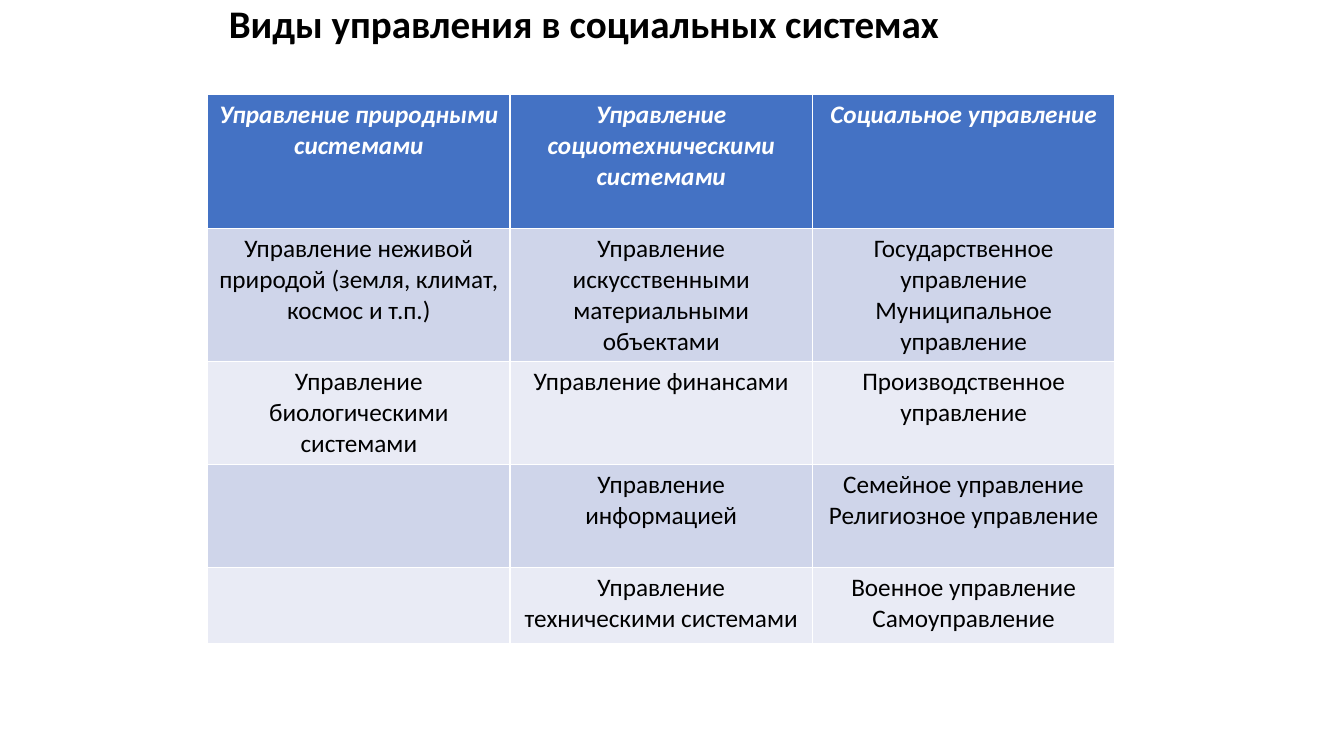
from dataclasses import dataclass

from pptx import Presentation
from pptx.dml.color import RGBColor
from pptx.enum.text import MSO_ANCHOR, MSO_AUTO_SIZE, PP_ALIGN
from pptx.table import Table, _Cell
from pptx.text.text import _Paragraph
from pptx.util import Inches, Pt

WHITE = RGBColor(0xFF, 0xFF, 0xFF)
BLACK = RGBColor(0x00, 0x00, 0x00)
BLUE = RGBColor(0x44, 0x72, 0xC4)
BAND_DARK = RGBColor(0xCF, 0xD5, 0xEA)
BAND_LIGHT = RGBColor(0xE9, 0xEB, 0xF5)
FONT = "Calibri"

prs = Presentation()
prs.slide_width, prs.slide_height = Inches(13.33), Inches(7.5)


def across(share: float) -> int:
    """Percentage of the slide width."""
    return int(prs.slide_width * share / 100)


def down(share: float) -> int:
    """Percentage of the slide height."""
    return int(prs.slide_height * share / 100)


@dataclass(frozen=True)
class TableRow:
    height: float  # percentage of the slide height
    cells: tuple[tuple[str, ...], ...]  # paragraphs of each cell


ROWS = [
    TableRow(17.73, (
        ("Управление природными системами",),
        ("Управление социотехническими системами",),
        ("Социальное управление",),
    )),
    TableRow(17.6, (
        ("Управление неживой природой (земля, климат, космос и т.п.)",),
        ("Управление искусственными материальными объектами",),
        ("Государственное управление", "Муниципальное управление"),
    )),
    TableRow(13.6, (
        ("Управление биологическими системами",),
        ("Управление финансами",),
        ("Производственное управление",),
    )),
    TableRow(13.6, (
        (),
        ("Управление информацией",),
        ("Семейное управление", "Религиозное управление"),
    )),
    TableRow(10.13, (
        (),
        ("Управление техническими системами",),
        ("Военное управление", "Самоуправление"),
    )),
]


def add_run(p: _Paragraph, text: str, size: float, color: RGBColor,
            bold: bool = False, italic: bool = False) -> None:
    r = p.add_run()
    r.text = text
    r.font.name, r.font.size = FONT, Pt(size)
    r.font.bold, r.font.italic = bold, italic
    r.font.color.rgb = color


def fill_cell(cell: _Cell, lines: tuple[str, ...], header: bool, fill: RGBColor) -> None:
    cell.fill.solid()
    cell.fill.fore_color.rgb = fill
    tf = cell.text_frame
    for i, line in enumerate(lines):
        p = tf.add_paragraph() if i else tf.paragraphs[0]
        p.alignment = PP_ALIGN.CENTER
        add_run(p, line, 18, WHITE if header else BLACK, bold=header, italic=header)


def fill_table(table: Table) -> None:
    for i, row in enumerate(ROWS):
        table.rows[i].height = down(row.height)
        band = BAND_DARK if i % 2 else BAND_LIGHT
        for j, lines in enumerate(row.cells):
            fill_cell(table.cell(i, j), lines, i == 0, band if i else BLUE)


def main() -> None:
    s = prs.slides.add_slide(prs.slide_layouts[5])

    # Title, raised by the line break that ends it
    title = s.shapes.title
    title.left, title.top = across(16.28), down(4)
    title.width, title.height = across(67.5), down(8.53)
    tf = title.text_frame
    tf.word_wrap, tf.auto_size = True, MSO_AUTO_SIZE.NONE
    tf.vertical_anchor = MSO_ANCHOR.MIDDLE
    p = tf.paragraphs[0]
    p.alignment, p.line_spacing = PP_ALIGN.LEFT, 0.9
    add_run(p, "Виды управления в социальных системах", 27.9, BLACK, bold=True)
    p.add_line_break()

    # Table with white rules from its style
    height = sum(row.height for row in ROWS)
    frame = s.shapes.add_table(len(ROWS), len(ROWS[0].cells), across(15.45),
                               down(12.53), across(67.5), down(height))
    fill_table(frame.table)

    prs.save("out.pptx")


if __name__ == "__main__":
    main()
